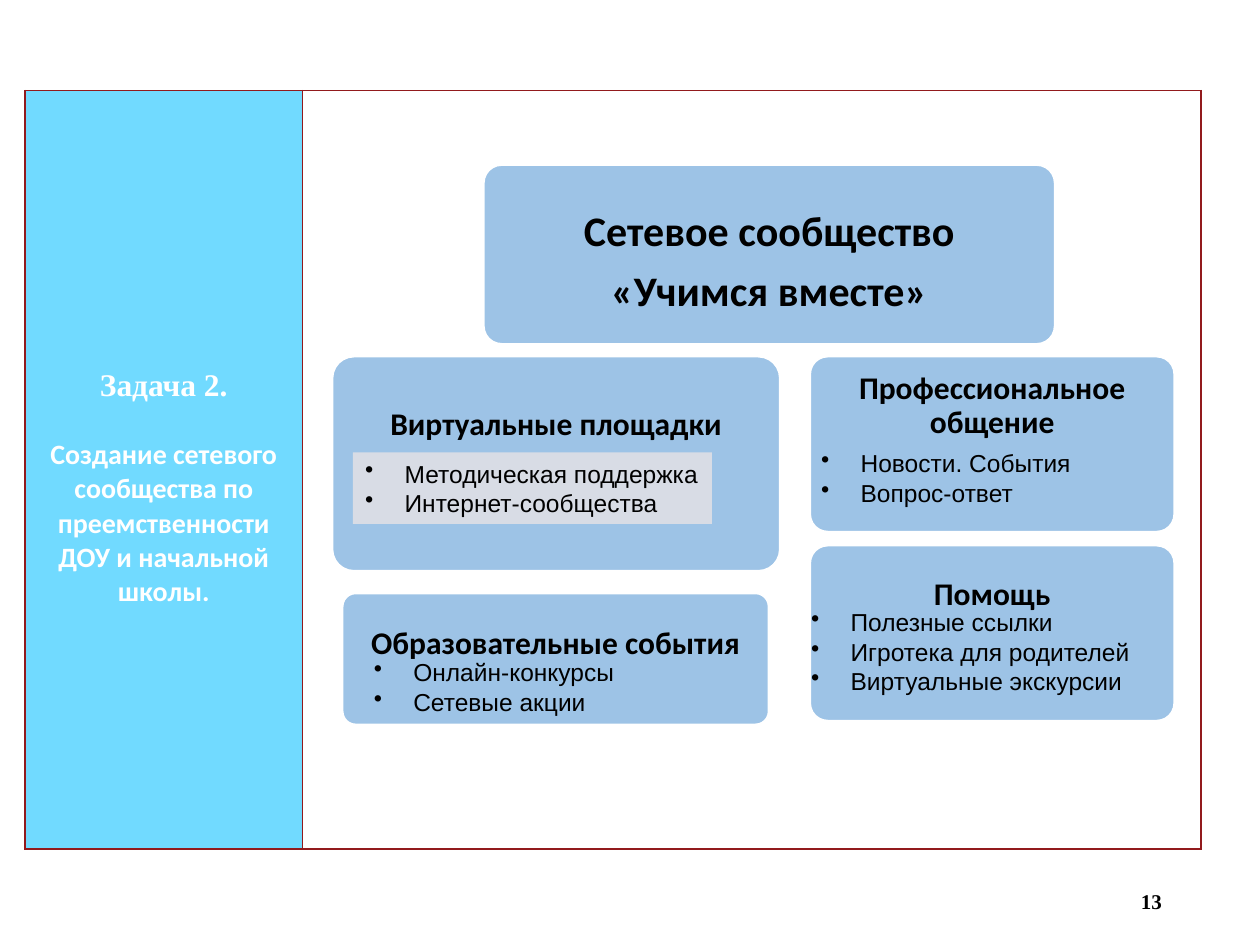
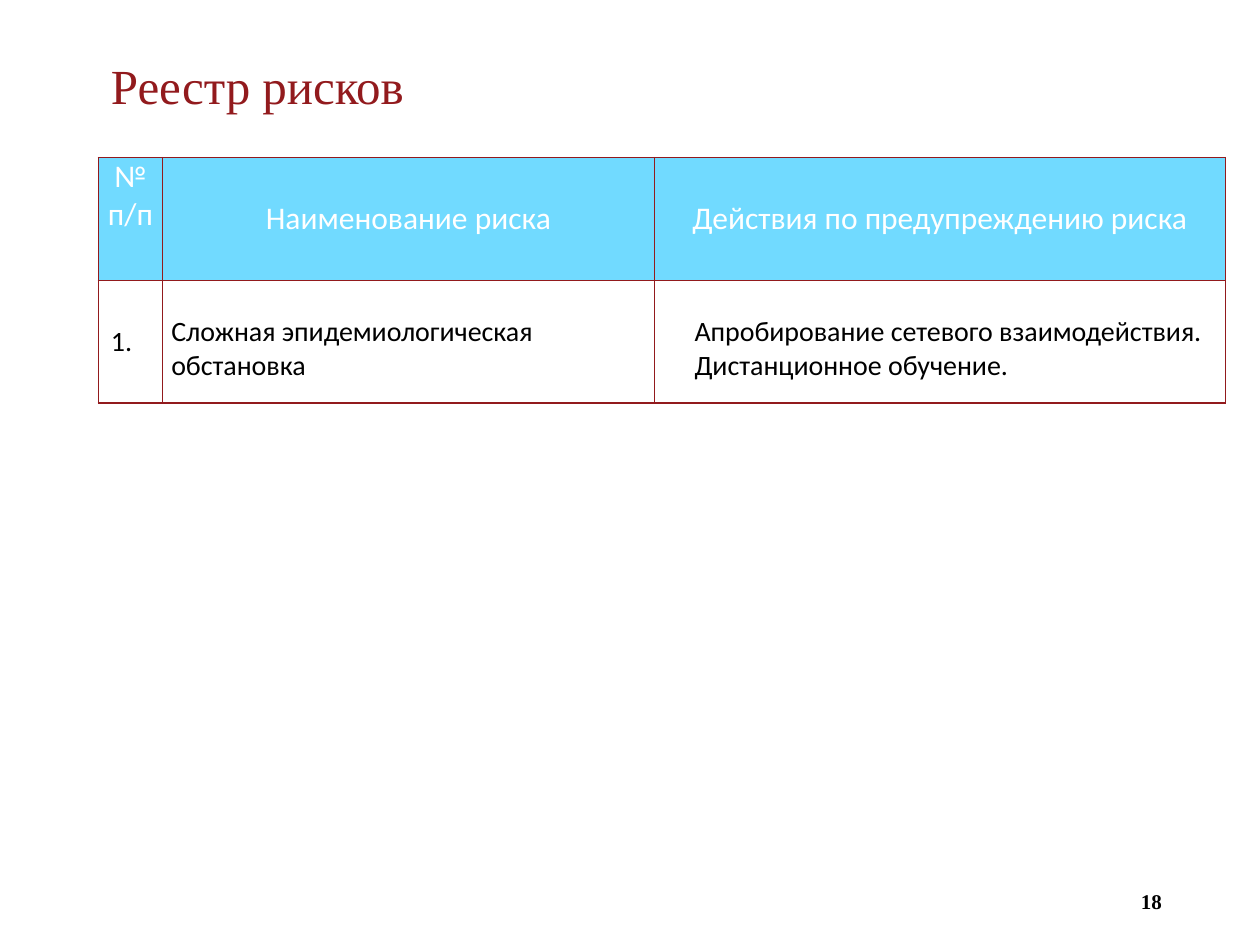
import pptx
import pptx.util
import pptx.dml.color
import pptx.enum.shapes
import pptx.enum.text
import pptx.oxml
import pptx.oxml.ns

Pt = pptx.util.Pt
Align = pptx.enum.text.PP_ALIGN
Anchor = pptx.enum.text.MSO_ANCHOR
Kind = pptx.enum.shapes.MSO_SHAPE

HUES = {
    "wine": "921A1D",
    "sky": "71DAFF",
    "card": "9DC3E6",
    "grey": "D8DCE5",
    "white": "FFFFFF",
    "black": "000000",
}
SERIF = "Times New Roman"
HEAD = {"name": "Calibri", "size": Pt(18), "bold": True}
ITEM = {"name": "Arial", "size": Pt(14), "bold": False}
PAGE = {"name": SERIF, "size": Pt(12), "bold": True}
TITLE = {"name": SERIF, "size": Pt(28), "bold": False}
TASK = {"name": SERIF, "size": Pt(18), "bold": True}
GOAL = {"name": "Calibri", "size": Pt(16), "bold": True}
LABEL = {"name": "Calibri", "size": Pt(18), "bold": False}
ENTRY = {"name": "Calibri", "size": Pt(16), "bold": False}
TIGHT = {"line_spacing": 0.9, "space_after": Pt(8.4)}
INDENT = Pt(22.5)
SLIM = {"margin_left": Pt(5), "margin_right": Pt(5),
        "margin_top": 0, "margin_bottom": 0}


def apply(target, values):
    for key, value in values.items():
        setattr(target, key, value)


def tint(name):
    return pptx.dml.color.RGBColor.from_string(HUES[name])


def paint(item, name):
    item.fill.solid()
    item.fill.fore_color.rgb = tint(name)


def write(frame, lines, font, hue="black", align=Align.LEFT, para=None):
    for num, line in enumerate(lines):
        part = frame.paragraphs[0] if num == 0 else frame.add_paragraph()
        apply(part, {"alignment": align, **(para or {})})
        run = part.add_run()
        run.text = line
        apply(run.font, font)
        run.font.color.rgb = tint(hue)


def dot(frame):
    for part in frame.paragraphs:
        props = part._p.get_or_add_pPr()
        props.set("marL", str(INDENT))
        props.set("indent", str(-INDENT))
        mark = pptx.oxml.parse_xml(
            f'<a:buChar {pptx.oxml.ns.nsdecls("a")} char="•"/>')
        props.append(mark)


def add_card(slide, box, lines, top, font=HEAD):
    card = slide.shapes.add_shape(Kind.ROUNDED_RECTANGLE, *map(Pt, box))
    card.shadow.inherit = False
    card.adjustments[0] = 0.1
    paint(card, "card")
    card.line.color.rgb = tint("white")
    card.line.width = Pt(1)
    frame = card.text_frame
    apply(frame, {**SLIM, "margin_top": Pt(top), "word_wrap": True,
                  "vertical_anchor": Anchor.TOP})
    write(frame, lines, font, align=Align.CENTER, para=TIGHT)


def add_list(slide, box, lines, fill=None):
    area = slide.shapes.add_textbox(*map(Pt, box))
    if fill:
        paint(area, fill)
    area.text_frame.word_wrap = True
    write(area.text_frame, lines, ITEM)
    dot(area.text_frame)


def add_page(slide, number):
    area = slide.shapes.add_textbox(Pt(509), Pt(500.4), Pt(162), Pt(28.8))
    apply(area.text_frame, {"word_wrap": True,
                            "vertical_anchor": Anchor.MIDDLE})
    write(area.text_frame, [number], PAGE, align=Align.RIGHT)


def edge(cell):
    props = cell._tc.get_or_add_tcPr()
    for side in "LRTB":
        props.append(pptx.oxml.parse_xml(
            f'<a:ln{side} {pptx.oxml.ns.nsdecls("a")} w="{Pt(1)}">'
            f'<a:solidFill><a:srgbClr val="{HUES["wine"]}"/></a:solidFill>'
            f'</a:ln{side}>'))


def add_grid(slide, left, top, cols, rows, fills):
    frame = slide.shapes.add_table(
        len(rows), len(cols), Pt(left), Pt(top), Pt(sum(cols)), Pt(sum(rows)))
    grid = frame.table
    apply(grid, {"first_row": False, "horz_banding": False})
    for col, width in zip(grid.columns, cols):
        col.width = Pt(width)
    for row, height, hues in zip(grid.rows, rows, fills):
        row.height = Pt(height)
        for cell, hue in zip(row.cells, hues):
            edge(cell)
            paint(cell, hue)
    return grid


def add_net(deck):
    slide = deck.slides.add_slide(deck.slide_layouts[6])
    add_page(slide, "13")
    grid = add_grid(slide, 14.4, 51.8, [158.4, 513.4], [433.4],
                    [["sky", "white"]])
    cell = grid.cell(0, 0)
    apply(cell, {"vertical_anchor": Anchor.MIDDLE, "margin_top": Pt(25)})
    write(cell.text_frame, ["Задача 2."], TASK, "white", Align.CENTER)
    goal = cell.text_frame.add_paragraph()
    apply(goal, {"alignment": Align.CENTER, "space_before": Pt(20)})
    run = goal.add_run()
    run.text = ("Создание сетевого сообщества по преемственности "
                "ДОУ и начальной школы.")
    apply(run.font, GOAL)
    run.font.color.rgb = tint("white")

    add_card(slide, (276.5, 94.3, 326.2, 102.2),
             ["Сетевое сообщество", "«Учимся вместе»"], 23,
             {**HEAD, "size": Pt(24)})
    cards = [
        ((190, 203.8, 255.6, 122.4), "Виртуальные площадки", 26),
        ((195.8, 339.1, 243.4, 74.9), "Образовательные события", 17),
        ((463, 203.8, 208, 100), "Профессиональное общение", 6),
        ((463, 311.8, 208, 100), "Помощь", 15.5),
    ]
    for box, head, top in cards:
        add_card(slide, box, [head], top)

    lists = [
        ((201.6, 258.5, 205.2, 41), "grey",
         ["Методическая поддержка", "Интернет-сообщества"]),
        ((462.2, 252.7, 193, 41), None,
         ["Новости. События", "Вопрос-ответ"]),
        ((206.6, 372.2, 201.6, 41), None,
         ["Онлайн-конкурсы", "Сетевые акции"]),
        ((456.5, 343.4, 196.6, 58.3), None,
         ["Полезные ссылки", "Игротека для родителей",
          "Виртуальные экскурсии"]),
    ]
    for box, fill, lines in lists:
        add_list(slide, box, lines, fill)


def add_risks(deck):
    slide = deck.slides.add_slide(deck.slide_layouts[5])
    title = slide.shapes.title
    apply(title, {"left": Pt(56.2), "top": Pt(18),
                  "width": Pt(604), "height": Pt(64.8)})
    apply(title.text_frame, {"vertical_anchor": Anchor.MIDDLE,
                             "word_wrap": True})
    write(title.text_frame, ["Реестр рисков"], TITLE, "wine",
          para={"line_spacing": 0.9})
    add_page(slide, "18")

    grid = add_grid(slide, 56.2, 90, [36.7, 281, 326.4], [70.4, 69.8],
                    [["sky"] * 3, ["white"] * 3])
    heads = [["№", "п/п"], ["Наименование риска"],
             ["Действия по предупреждению риска"]]
    for num, lines in enumerate(heads):
        cell = grid.cell(0, num)
        anchor = Anchor.MIDDLE if num else Anchor.TOP
        apply(cell, {**SLIM, "vertical_anchor": anchor})
        write(cell.text_frame, lines, LABEL, "white", Align.CENTER)

    drop = {**SLIM, "margin_top": Pt(19.5), "vertical_anchor": Anchor.TOP}
    entries = [
        (["1."], {"vertical_anchor": Anchor.MIDDLE}),
        (["Сложная эпидемиологическая обстановка"], drop),
        (["Апробирование сетевого взаимодействия.",
          "Дистанционное обучение."], {**drop, "margin_left": Pt(23)}),
    ]
    for num, (lines, look) in enumerate(entries):
        cell = grid.cell(1, num)
        apply(cell, look)
        write(cell.text_frame, lines, ENTRY)


def main():
    deck = pptx.Presentation()
    apply(deck, {"slide_width": Pt(720), "slide_height": Pt(540)})
    add_net(deck)
    add_risks(deck)
    deck.save("out.pptx")


if __name__ == "__main__":
    main()
